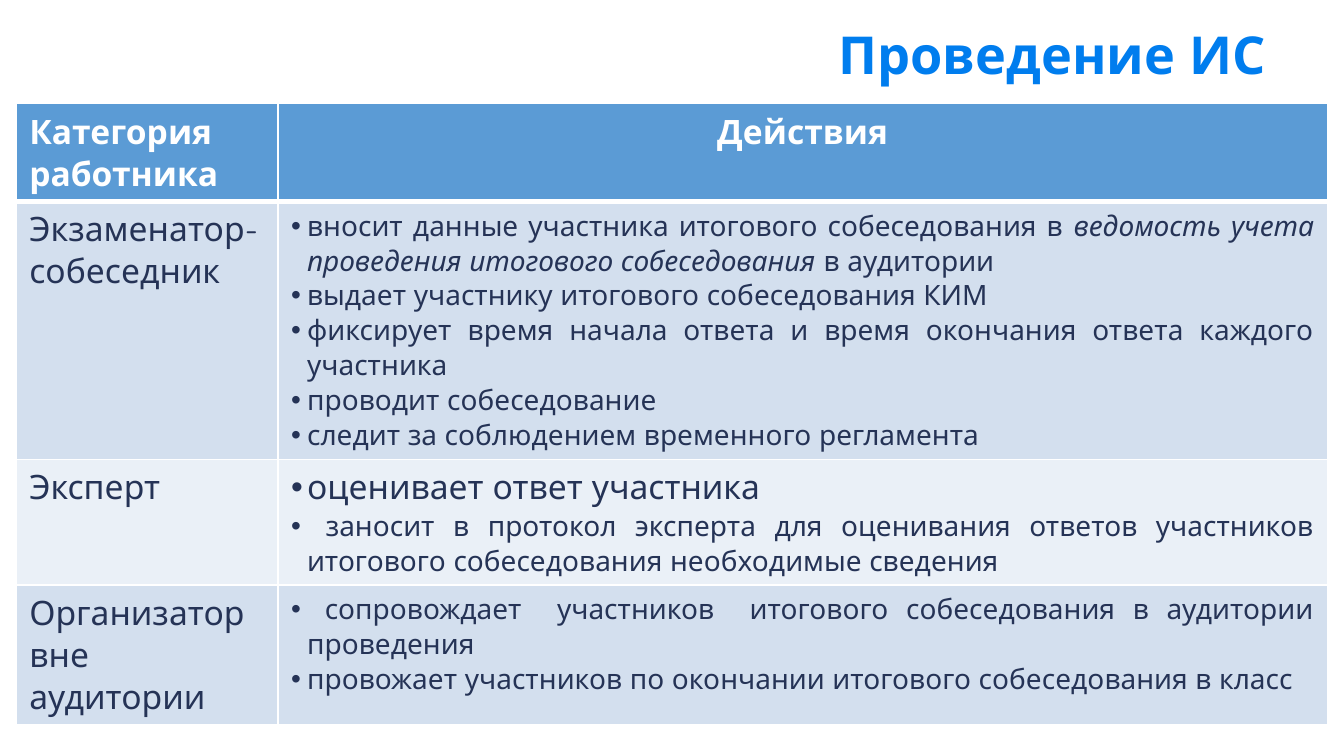
from lxml.etree import SubElement
from pptx import Presentation
from pptx.dml.color import RGBColor
from pptx.enum.text import MSO_ANCHOR, PP_ALIGN as AL
from pptx.oxml.ns import qn
from pptx.util import Cm, Pt

FONT = "Quicksand"
WHITE, BLUE, NAVY = "FFFFFF", "007DEE", "253356"
HEADER, BAND_DARK, BAND_LIGHT = "5B9BD5", "D3DFEE", "EAF0F7"
COL_WIDTHS = (4.95, 19.84)
ROW_HEIGHTS = (1.8, 4.86, 2.36, 2.54)
HEADINGS = (("Категория работника", AL.LEFT), ("Действия", AL.CENTER))
ROLES = [
    ("Экзаменатор-собеседник", BAND_DARK, [
        (15, ["вносит данные участника итогового собеседования в ",
              "ведомость учета проведения итогового собеседования",
              " в аудитории"]),
        (15, ["выдает участнику итогового собеседования КИМ"]),
        (15, ["фиксирует время начала ответа и время окончания ответа каждого участника"]),
        (15, ["проводит собеседование"]),
        (15, ["следит за соблюдением временного регламента"]),
    ]),
    ("Эксперт", BAND_LIGHT, [
        (18, ["оценивает ответ участника"]),
        (15, [" заносит в протокол эксперта для оценивания ответов участников "
              "итогового собеседования необходимые сведения"]),
    ]),
    ("Организатор вне аудитории", BAND_DARK, [
        (15, [" сопровождает  участников  итогового собеседования в аудитории проведения"]),
        (15, ["провожает участников по окончании итогового собеседования в класс"]),
    ]),
]


def rgb(value):
    """Turn a hex string into a colour."""
    return RGBColor.from_string(value)


def add_text(p, text, size=18, color=NAVY, bold=False, italic=False, align=AL.LEFT):
    """Append a formatted run to a paragraph."""
    p.alignment = align
    r = p.add_run()
    r.text = text
    f = r.font
    f.name, f.size, f.bold, f.italic = FONT, Pt(size), bold, italic
    f.color.rgb = rgb(color)


def add_bullet(p):
    """Give a paragraph a hanging bullet."""
    pPr = p._p.get_or_add_pPr()
    pPr.set("marL", str(Cm(0.3)))
    pPr.set("indent", str(-Cm(0.79)))
    SubElement(pPr, qn("a:buFont"), typeface="Arial")
    SubElement(pPr, qn("a:buChar"), char="•")


def style_cell(cell, fill, top=1, bottom=1):
    """Set the white borders and the fill of a cell."""
    tcPr = cell._tc.get_or_add_tcPr()
    for side, width in (("L", 1), ("R", 1), ("T", top), ("B", bottom)):
        ln = SubElement(tcPr, qn(f"a:ln{side}"), w=str(Pt(width)))
        SubElement(SubElement(ln, qn("a:solidFill")), qn("a:srgbClr"), val=WHITE)
    cell.fill.solid()
    cell.fill.fore_color.rgb = rgb(fill)


def build_title(slide, left, top, width, height):
    """Place the slide title in its box."""
    sp = slide.shapes.title
    sp.left, sp.top, sp.width, sp.height = Cm(left), Cm(top), Cm(width), Cm(height)
    tf = sp.text_frame
    tf.word_wrap = True
    tf.vertical_anchor = MSO_ANCHOR.MIDDLE
    p = tf.paragraphs[0]
    p.line_spacing = 0.9
    add_text(p, "Проведение ИС", size=28, color=BLUE, bold=True, align=AL.RIGHT)


def build_table(slide, left, top, width, height):
    """Place the table of staff roles and their actions."""
    table = slide.shapes.add_table(len(ROLES) + 1, 2, Cm(left), Cm(top),
                                   Cm(width), Cm(height)).table
    for column, w in zip(table.columns, COL_WIDTHS):
        column.width = Cm(w)
    for row, h in zip(table.rows, ROW_HEIGHTS):
        row.height = Cm(h)
    for c, (heading, align) in enumerate(HEADINGS):
        cell = table.cell(0, c)
        style_cell(cell, HEADER, bottom=3)
        add_text(cell.text_frame.paragraphs[0], heading, color=WHITE, bold=True, align=align)
    for i, (role, fill, actions) in enumerate(ROLES, 1):
        role_cell, action_cell = table.cell(i, 0), table.cell(i, 1)
        for cell in (role_cell, action_cell):
            style_cell(cell, fill, top=3 if i == 1 else 1)
        add_text(role_cell.text_frame.paragraphs[0], role)
        tf = action_cell.text_frame
        for n, (size, parts) in enumerate(actions):
            p = tf.add_paragraph() if n else tf.paragraphs[0]
            add_bullet(p)
            for k, part in enumerate(parts):
                add_text(p, part, size=size, italic=k == 1, align=AL.JUSTIFY)


def main():
    """Build the slide and save it."""
    prs = Presentation()
    prs.slide_width, prs.slide_height = Cm(25.4), Cm(14.29)
    slide = prs.slides.add_slide(prs.slide_layouts[5])
    build_table(slide, 0.3, 1.96, sum(COL_WIDTHS), sum(ROW_HEIGHTS))
    build_title(slide, 2.29, 0.36, 21.89, 1.45)
    prs.save("out.pptx")


if __name__ == "__main__":
    main()
